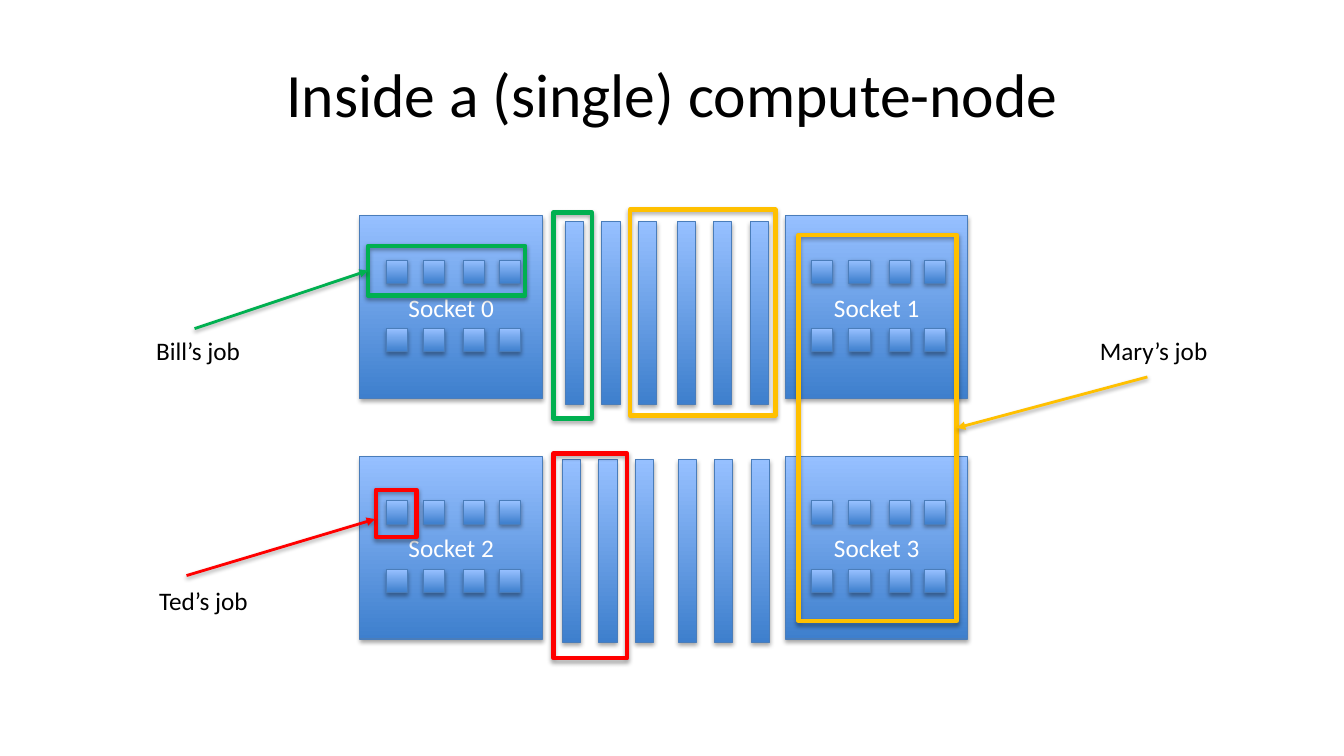
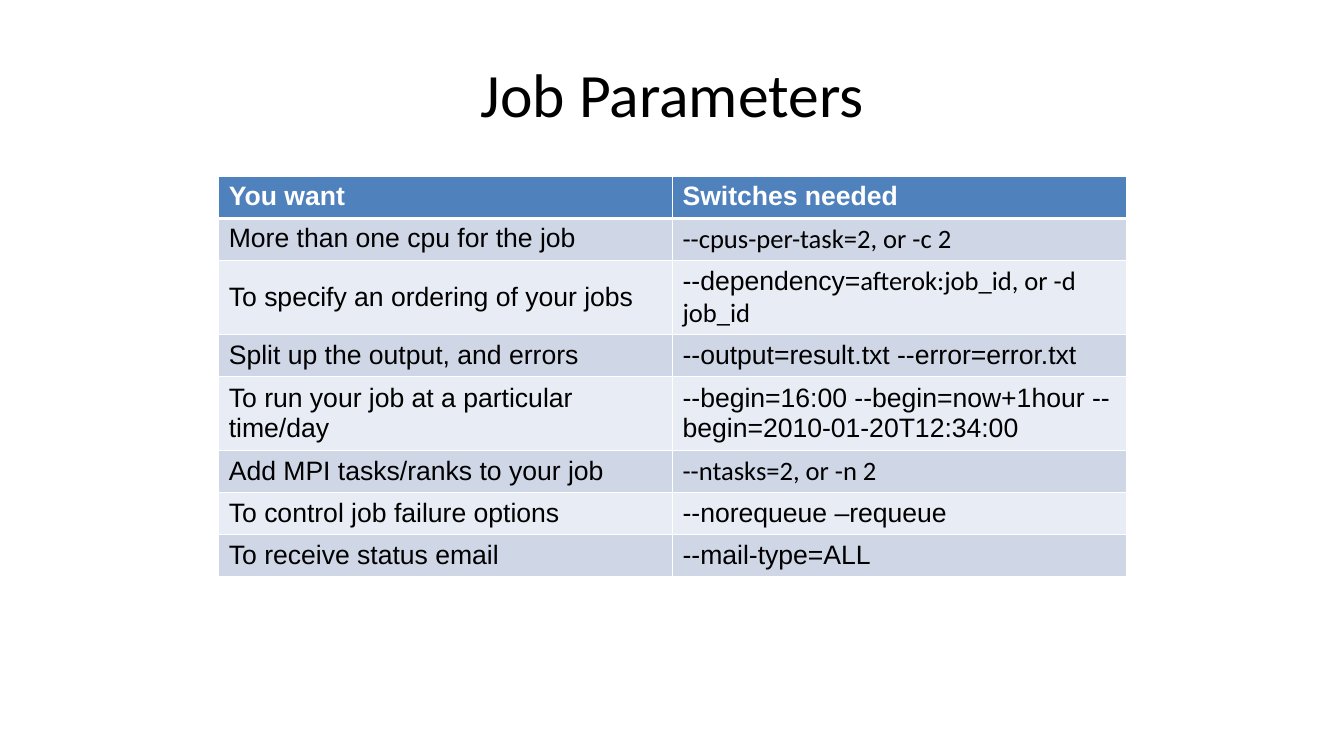
"""Build two slides: jobs inside a compute node, and a table of job parameters."""
from itertools import product

from lxml.etree import SubElement
from pptx import Presentation
from pptx.dml.color import RGBColor
from pptx.enum.shapes import MSO_CONNECTOR as Connector, MSO_SHAPE as Preset
from pptx.enum.text import MSO_ANCHOR as Anchor, PP_ALIGN as Align
from pptx.oxml.ns import qn
from pptx.util import Inches, Pt

BLACK = RGBColor(0x00, 0x00, 0x00)
WHITE = RGBColor(0xFF, 0xFF, 0xFF)
CHIP_DARK = RGBColor(0x3E, 0x7F, 0xCD)
CHIP_LIGHT = RGBColor(0x96, 0xC0, 0xFF)
CHIP_LINE = RGBColor(0x4A, 0x7D, 0xBA)
GREEN = RGBColor(0x00, 0xB0, 0x50)
RED = RGBColor(0xFF, 0x00, 0x00)
AMBER = RGBColor(0xFF, 0xC0, 0x00)
HEADER_FILL = RGBColor(0x4F, 0x81, 0xBD)
BAND_FILLS = [RGBColor(0xE8, 0xEC, 0xF4), RGBColor(0xCF, 0xD7, 0xE7)]


def write(frame, text, size=18, font="Calibri", color=BLACK, bold=False, align=Align.LEFT):
    paragraph = frame.paragraphs[0]
    paragraph.alignment = align
    run = paragraph.add_run()
    run.text = text
    run.font.size = Pt(size)
    run.font.name = font
    run.font.color.rgb = color
    run.font.bold = bold


def add_rectangle(slide, left, top, width, height, outline=None):
    shape = slide.shapes.add_shape(
        Preset.RECTANGLE, Inches(left), Inches(top), Inches(width), Inches(height))
    shape.line.color.rgb = outline or CHIP_LINE
    shape.line.width = Pt(3.25 if outline else 0.75)
    if outline:
        shape.fill.background()
    else:
        shape.fill.gradient()
        shape.fill.gradient_angle = 90
        for stop, color in zip(shape.fill.gradient_stops, (CHIP_DARK, CHIP_LIGHT)):
            stop.color.rgb = color
    return shape


presentation = Presentation()
presentation.slide_width = Inches(13.33)
presentation.slide_height = Inches(7.5)

slides = []
for title in ("Inside a (single) compute-node", "Job Parameters"):
    slide = presentation.slides.add_slide(presentation.slide_layouts[6])
    title_box = slide.shapes.add_textbox(Inches(0.67), Inches(0.3), Inches(12), Inches(1.25))
    title_box.text_frame.word_wrap = True
    title_box.text_frame.vertical_anchor = Anchor.MIDDLE
    write(title_box.text_frame, title, size=44, align=Align.CENTER)
    slides.append(slide)
node_slide, table_slide = slides

shadowed = []
for number, (top, left) in enumerate(product((2.14, 4.53), (3.57, 7.79))):
    socket = add_rectangle(node_slide, left, top, 1.81, 1.81)
    socket.text_frame.vertical_anchor = Anchor.MIDDLE
    write(socket.text_frame, f"Socket {number}", color=WHITE, align=Align.CENTER)
    shadowed.append(socket)
    for down, across in product((0.44, 1.12), (0.26, 0.63, 1.03, 1.38)):
        shadowed.append(add_rectangle(node_slide, left + across, top + down, 0.21, 0.23))

for left, top in ((5.61, 2.2), (6.72, 2.2), (5.58, 4.56), (6.73, 4.56)):
    for index in range(3):
        shadowed.append(add_rectangle(node_slide, left + index * 0.36, top, 0.18, 1.81))

jobs = [
    ("Ted’s job", RED, (1.48, 5.76, 1.13), (1.85, 5.71), (3.72, 5.15), None,
     (3.73, 4.86, 0.4, 0.47), (5.49, 4.5, 0.73, 2.03)),
    ("Bill’s job", GREEN, (1.45, 3.28, 1.05), (1.93, 3.26), (3.65, 2.69), 1,
     (3.65, 2.44, 1.56, 0.49), (5.49, 2.11, 0.38, 2.04)),
    ("Mary’s job", AMBER, (10.81, 3.28, 1.28), (11.38, 3.74), (9.49, 4.25), 3,
     (7.92, 2.33, 1.57, 3.83), (6.25, 2.08, 1.44, 2.04)),
]
for label, color, (left, top, width), start, tip, side, cores_place, memory_place in jobs:
    cores = add_rectangle(node_slide, *cores_place, outline=color)
    memory = add_rectangle(node_slide, *memory_place, outline=color)
    arrow = node_slide.shapes.add_connector(
        Connector.STRAIGHT, *(Inches(value) for value in start + tip))
    if side is not None:
        arrow.end_connect(cores, side)
    arrow.line.color.rgb = color
    arrow.line.width = Pt(2)
    SubElement(arrow.element.spPr.find(qn("a:ln")), qn("a:tailEnd"), type="triangle")
    shadowed += [cores, memory, arrow]
    label_box = node_slide.shapes.add_textbox(
        Inches(left), Inches(top), Inches(width), Inches(0.4))
    label_box.text_frame.word_wrap = True
    write(label_box.text_frame, label)

for shape in shadowed:
    effects = SubElement(shape.element.spPr, qn("a:effectLst"))
    shadow = SubElement(effects, qn("a:outerShdw"), blurRad="40000", dist="23000",
                        dir="5400000", rotWithShape="0")
    shadow_color = SubElement(shadow, qn("a:srgbClr"), val=str(BLACK))
    SubElement(shadow_color, qn("a:alpha"), val="35000")

rows = [
    (0.41, "You want", [("Switches needed", "Arial")]),
    (0.41, "More than one cpu for the job", [("--cpus-per-task=2, or -c 2", "Calibri")]),
    (0.72, "To specify an ordering of your jobs",
     [("--dependency=", "Arial"), ("afterok:job_id, or -d job_id", "Calibri")]),
    (0.41, "Split up the output, and errors",
     [("--output=result.txt --error=error.txt", "Arial")]),
    (0.72, "To run your job at a particular time/day",
     [("--begin=16:00 --begin=now+1hour --begin=2010-01-20T12:34:00", "Arial")]),
    (0.41, "Add MPI tasks/ranks to your job", [("--ntasks=2, or -n 2", "Calibri")]),
    (0.41, "To control job failure options", [("--norequeue –requeue", "Arial")]),
    (0.41, "To receive status email", [("--mail-type=ALL", "Arial")]),
]
table = table_slide.shapes.add_table(
    len(rows), 2, Inches(2.17), Inches(1.75), Inches(9), Inches(3.9)).table
table.horz_banding = False
for row_index, (height, wish, switches) in enumerate(rows):
    table.rows[row_index].height = Inches(height)
    header = row_index == 0
    for column_index, runs in enumerate(([(wish, "Arial")], switches)):
        cell = table.cell(row_index, column_index)
        cell.vertical_anchor = Anchor.TOP if row_index < 2 else Anchor.MIDDLE
        for text, font in runs:
            write(cell.text_frame, text, size=19, font=font,
                  color=WHITE if header else BLACK, bold=header)
        properties = cell._tc.get_or_add_tcPr()
        for edge in ("lnL", "lnR", "lnT", "lnB"):
            thick = (row_index, edge) in ((0, "lnB"), (1, "lnT"))
            border = SubElement(properties, qn(f"a:{edge}"), w=str(Pt(3 if thick else 1)))
            border_fill = SubElement(border, qn("a:solidFill"))
            SubElement(border_fill, qn("a:srgbClr"), val=str(WHITE))
        cell.fill.solid()
        cell.fill.fore_color.rgb = HEADER_FILL if header else BAND_FILLS[row_index % 2]

presentation.save("out.pptx")
